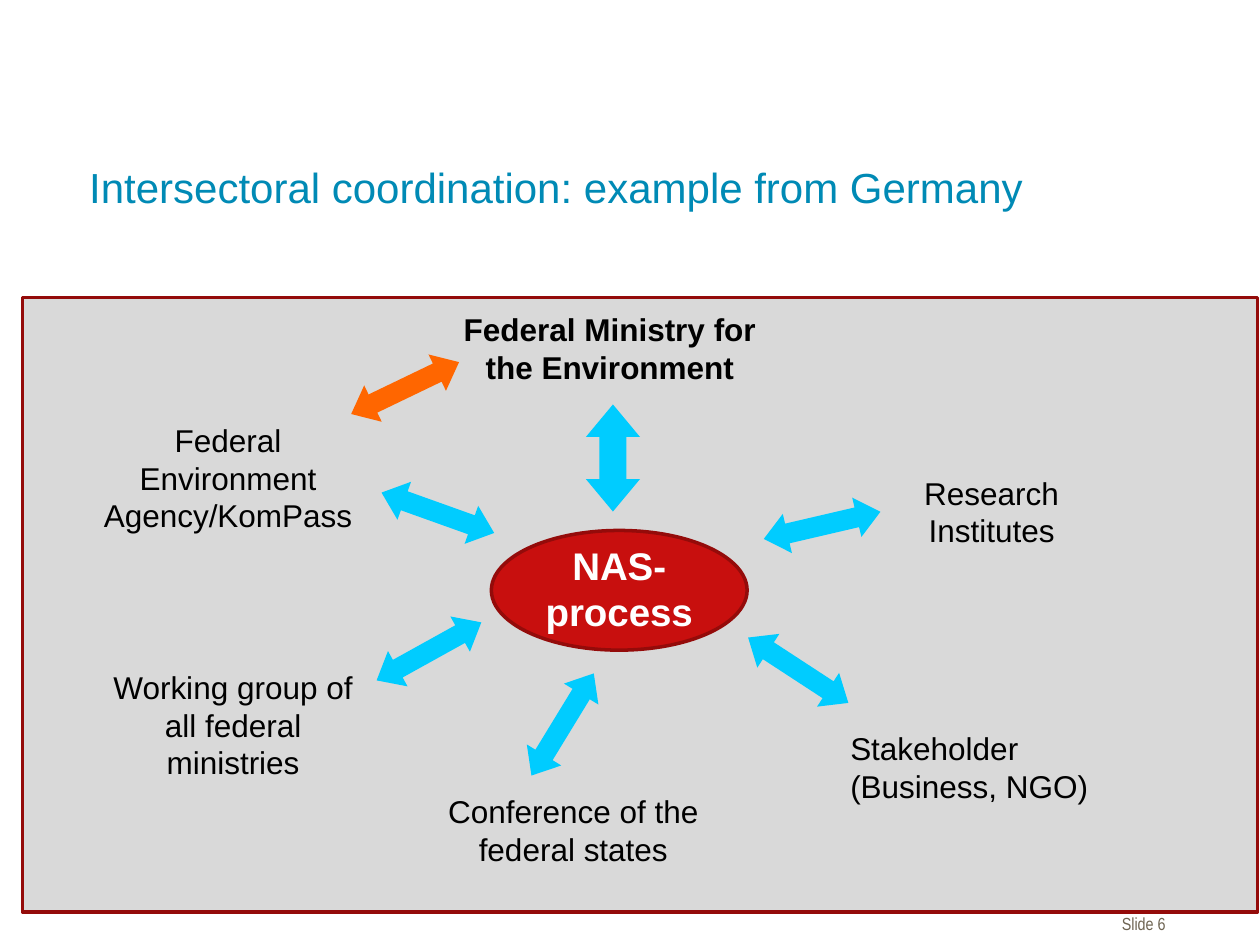
from pptx import Presentation
from pptx.dml.color import RGBColor
from pptx.enum.shapes import MSO_SHAPE
from pptx.enum.text import MSO_ANCHOR, PP_ALIGN
from pptx.util import Inches, Pt

THEME = {
    "title": {"name": "Arial", "size": Pt(24), "color": "008AB5"},
    "label": {"name": "Arial", "size": Pt(18), "color": "000000"},
    "lead": {"name": "Arial", "size": Pt(18), "color": "000000", "bold": True},
    "core": {"name": "Arial", "size": Pt(22), "color": "FFFFFF", "bold": True},
    "footer": {"name": "Arial Narrow", "size": Pt(10), "color": "6E6452"},
    "panel": "D9D9D9",
    "hub": "C80F0E",
    "border": "940B0A",
    "link": "00CCFF",
    "direct_link": "FF6600",
}


def add_text(slide, text, box, style, align=PP_ALIGN.CENTER, **frame_format):
    shape = slide.shapes.add_textbox(*map(Inches, box))
    frame = shape.text_frame
    frame_format = {"word_wrap": True, "vertical_anchor": MSO_ANCHOR.TOP, **frame_format}
    for name, value in frame_format.items():
        setattr(frame, name, value)
    paragraph = frame.paragraphs[0]
    paragraph.text = text
    paragraph.alignment = align
    for run in paragraph.runs:
        for name, value in THEME[style].items():
            if name == "color":
                run.font.color.rgb = RGBColor.from_string(value)
            else:
                setattr(run.font, name, value)


def add_filled_shape(slide, kind, box, fill, border=None):
    shape = slide.shapes.add_shape(kind, *map(Inches, box))
    shape.shadow.inherit = False
    shape.fill.solid()
    shape.fill.fore_color.rgb = RGBColor.from_string(THEME[fill])
    if border:
        shape.line.color.rgb = RGBColor.from_string(THEME[border])
        shape.line.width = Pt(2)
    else:
        shape.line.fill.background()
    return shape


presentation = Presentation()
presentation.slide_width = Inches(10)
presentation.slide_height = Inches(7.5)
slide = presentation.slides.add_slide(presentation.slide_layouts[6])

add_text(slide, "Slide 6", (8.24, 7.2, 1.01, 0.27), "footer", PP_ALIGN.RIGHT, margin_right=0)
add_text(slide, "Intersectoral coordination: example from Germany",
         (0.61, 1.2, 8.5, 0.68), "title", PP_ALIGN.LEFT, margin_top=Inches(0.08))

add_filled_shape(slide, MSO_SHAPE.RECTANGLE, (0.18, 2.36, 9.8, 4.88), "panel", "border")

actors = [
    ("Federal Environment Agency/KomPass", (0.67, 3.29, 2.28, 1.01), "label", PP_ALIGN.CENTER),
    ("Federal Ministry for the Environment", (3.58, 2.41, 2.52, 0.71), "lead", PP_ALIGN.CENTER),
    ("Research Institutes", (6.81, 3.71, 2.12, 0.71), "label", PP_ALIGN.CENTER),
    ("Stakeholder\n(Business, NGO)", (6.65, 5.74, 2.44, 0.71), "label", PP_ALIGN.LEFT),
    ("Conference of the federal states", (3.21, 6.24, 2.68, 0.71), "label", PP_ALIGN.CENTER),
    ("Working group of all federal ministries", (0.67, 5.25, 2.36, 0.71), "label", PP_ALIGN.CENTER),
]
for text, box, style, align in actors:
    add_text(slide, text, box, style, align)

slim, wide = (0.95, 0.32), (0.85, 0.43)
arrows = [
    (3, 3.91, slim, 19.7, "link"),
    (4.44, 3.42, wide, 270, "link"),
    (6.05, 4.01, slim, 346.9, "link"),
    (5.86, 5.16, slim, 33.1, "link"),
    (3.99, 5.59, slim, 301.4, "link"),
    (2.93, 5.01, slim, 331, "link"),
    (2.74, 2.92, slim, 334.3, "direct_link"),
]
for left, top, size, rotation, fill in arrows:
    arrow = add_filled_shape(slide, MSO_SHAPE.LEFT_RIGHT_ARROW, (left, top, *size), fill)
    arrow.rotation = rotation
    arrow.adjustments[0] = 0.5
    arrow.adjustments[1] = 0.6

add_filled_shape(slide, MSO_SHAPE.OVAL, (3.9, 4.21, 2.03, 0.95), "hub", "border")
add_text(slide, "NAS- process", (4.13, 4.25, 1.57, 0.84), "core")

presentation.save("out.pptx")
